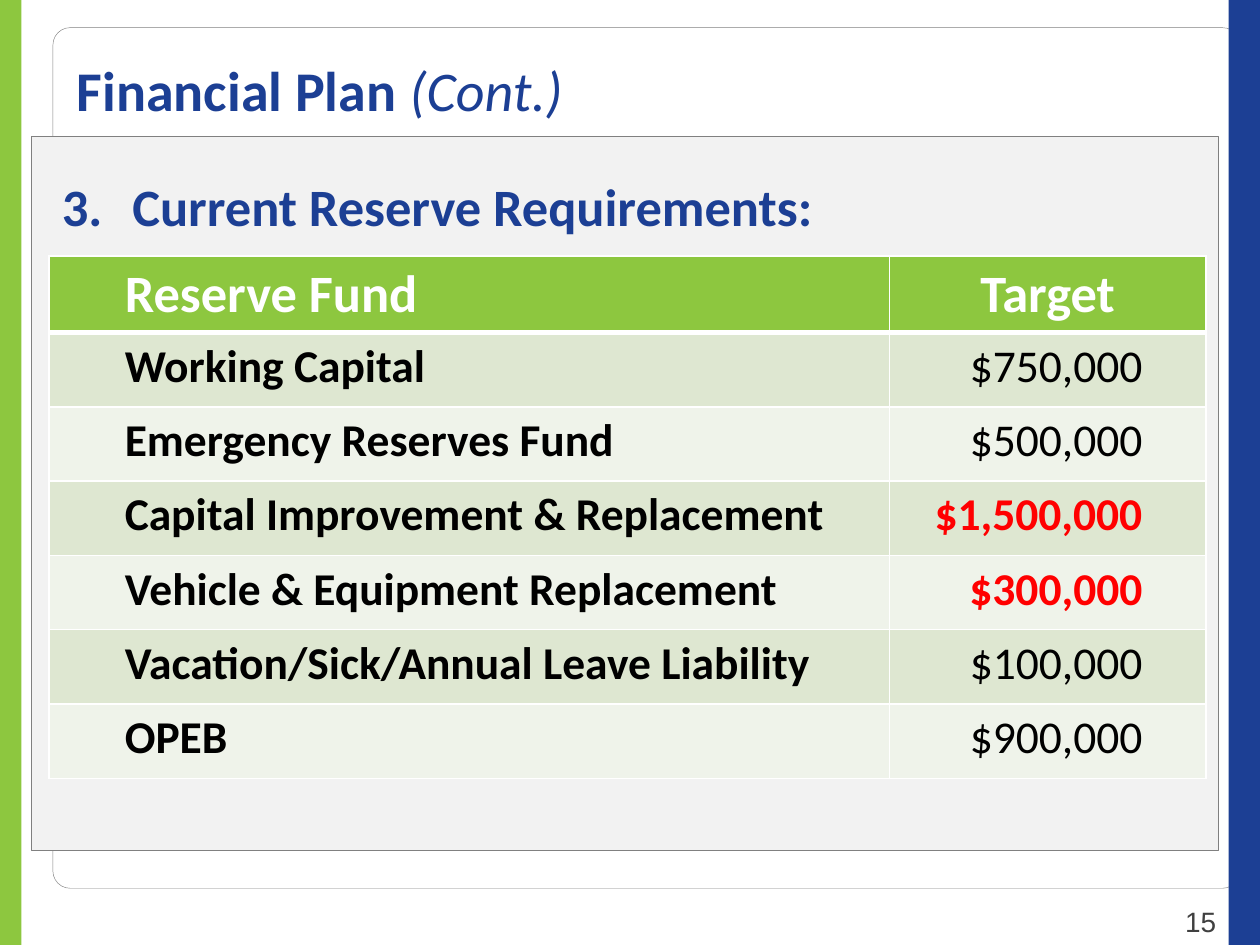
from lxml import etree
from pptx import Presentation
from pptx.dml.color import RGBColor
from pptx.enum.shapes import MSO_SHAPE
from pptx.enum.text import MSO_ANCHOR, MSO_AUTO_SIZE, PP_ALIGN
from pptx.oxml.ns import qn
from pptx.util import Inches, Pt

RECT, ROUND = MSO_SHAPE.RECTANGLE, MSO_SHAPE.ROUNDED_RECTANGLE
LEFT, MID, RIGHT = PP_ALIGN.LEFT, PP_ALIGN.CENTER, PP_ALIGN.RIGHT
TOP, FIXED = MSO_ANCHOR.TOP, MSO_AUTO_SIZE.NONE

HUES = {
    "green": "8DC73F", "blue": "1C3F94", "panel": "F2F2F2", "edge": "808080",
    "band": "DEE7D1", "pale": "EFF3EA", "white": "FFFFFF", "black": "000000",
    "red": "FF0000", "gray": "404040",
}
TITLE = [("Financial Plan ", True, False), ("(Cont.)", False, True)]
LEAD = "Current Reserve Requirements:"
START = 3
PAGE = "15"
HEAD = ("Reserve Fund", "Target")
FUNDS = [
    ("Working Capital", "$750,000", False),
    ("Emergency Reserves Fund", "$500,000", False),
    ("Capital Improvement & Replacement", "$1,500,000", True),
    ("Vehicle & Equipment Replacement", "$300,000", True),
    ("Vacation/Sick/Annual Leave Liability", "$100,000", False),
    ("OPEB", "$900,000", False),
]
FRAMES = [
    (ROUND, (0.42, 0.22, 9.42, 6.83), None, "edge", 0.02),
    (RECT, (0.25, 1.08, 9.42, 5.67), "panel", "edge", None),
    (RECT, (0, 0, 0.17, 7.5), "green", None, None),
    (RECT, (9.75, 0, 0.25, 7.5), "blue", None, None),
]
COLS = (6.67, 2.51)
ROW = 0.59


def hue(name):
    return RGBColor.from_string(HUES[name])


def place(shape, box):
    shape.left, shape.top, shape.width, shape.height = map(Inches, box)


def add_run(para, text, size, color, bold=False, slant=False, face="Calibri"):
    run = para.add_run()
    run.text = text
    font = run.font
    font.name, font.size = face, Pt(size)
    font.bold, font.italic = bold, slant
    font.color.rgb = hue(color)


def add_frame(slide, kind, box, fill, line, bend):
    shape = slide.shapes.add_shape(kind, *map(Inches, box))
    shape.shadow.inherit = False
    if bend is not None:
        shape.adjustments[0] = bend
    if fill:
        shape.fill.solid()
        shape.fill.fore_color.rgb = hue(fill)
    else:
        shape.fill.background()
    if line:
        shape.line.color.rgb = hue(line)
        shape.line.width = Pt(0.25)
    else:
        shape.line.fill.background()


def set_text(slide, holder, box):
    place(holder, box)
    slide.shapes._spTree.append(holder._element)
    frame = holder.text_frame
    frame.auto_size, frame.vertical_anchor = FIXED, TOP
    para = frame.paragraphs[0]
    para.alignment = LEFT
    para.space_before, para.space_after = Pt(0), Pt(6)
    return para


def number(para, start, gap):
    props = para._p.get_or_add_pPr()
    props.set("marL", str(Inches(gap)))
    props.set("indent", str(-Inches(gap)))
    mark = etree.SubElement(props, qn("a:buAutoNum"))
    mark.set("type", "arabicPeriod")
    mark.set("startAt", str(start))


def style(cell, fill, over, under):
    props = cell._tc.get_or_add_tcPr()
    for tag, width in (("lnL", 1), ("lnR", 1), ("lnT", over), ("lnB", under)):
        line = etree.SubElement(props, qn("a:" + tag), w=str(Pt(width)))
        solid = etree.SubElement(line, qn("a:solidFill"))
        etree.SubElement(solid, qn("a:srgbClr"), val=HUES["white"])
    cell.fill.solid()
    cell.fill.fore_color.rgb = hue(fill)
    cell.vertical_anchor = TOP


def add_funds(slide):
    count = len(FUNDS) + 1
    spot = map(Inches, (0.39, 2.03, sum(COLS), ROW * count))
    table = slide.shapes.add_table(count, len(COLS), *spot).table
    for col, width in zip(table.columns, COLS):
        col.width = Inches(width)
    for row in table.rows:
        row.height = Inches(ROW)
    for i, (name, goal, alert) in enumerate([(*HEAD, False)] + FUNDS):
        top = i == 0
        fill = "green" if top else "band" if i % 2 else "pale"
        size, ink = (30, "white") if top else (26, "black")
        left, right = table.cell(i, 0), table.cell(i, 1)
        for cell in (left, right):
            style(cell, fill, 3 if i == 1 else 1, 3 if top else 1)
        para = left.text_frame.paragraphs[0]
        para._p.get_or_add_pPr().set("marL", str(Inches(0.5)))
        add_run(para, name, size, ink, True)
        para = right.text_frame.paragraphs[0]
        para.alignment = MID if top else RIGHT
        if not top:
            right.margin_right = Inches(0.5)
        add_run(para, goal, size, "red" if alert else ink, top or alert)


def main():
    deck = Presentation()
    deck.slide_width, deck.slide_height = Inches(10), Inches(7.5)
    slide = deck.slides.add_slide(deck.slide_layouts[1])
    for frame in FRAMES:
        add_frame(slide, *frame)

    note = slide.shapes.add_textbox(*map(Inches, (9.25, 7.13, 0.5, 0.37)))
    note.text_frame.word_wrap = True
    para = note.text_frame.paragraphs[0]
    para.alignment = RIGHT
    add_run(para, PAGE, 16, "gray", face="Arial")

    para = set_text(slide, slide.placeholders[1], (0.39, 1.33, 9.22, 5.33))
    number(para, START, 0.56)
    add_run(para, LEAD, 30, "blue", True)

    para = set_text(slide, slide.shapes.title, (0.51, 0.39, 9.22, 0.75))
    for text, bold, slant in TITLE:
        add_run(para, text, 32, "blue", bold, slant)

    add_funds(slide)
    deck.save("out.pptx")


if __name__ == "__main__":
    main()
